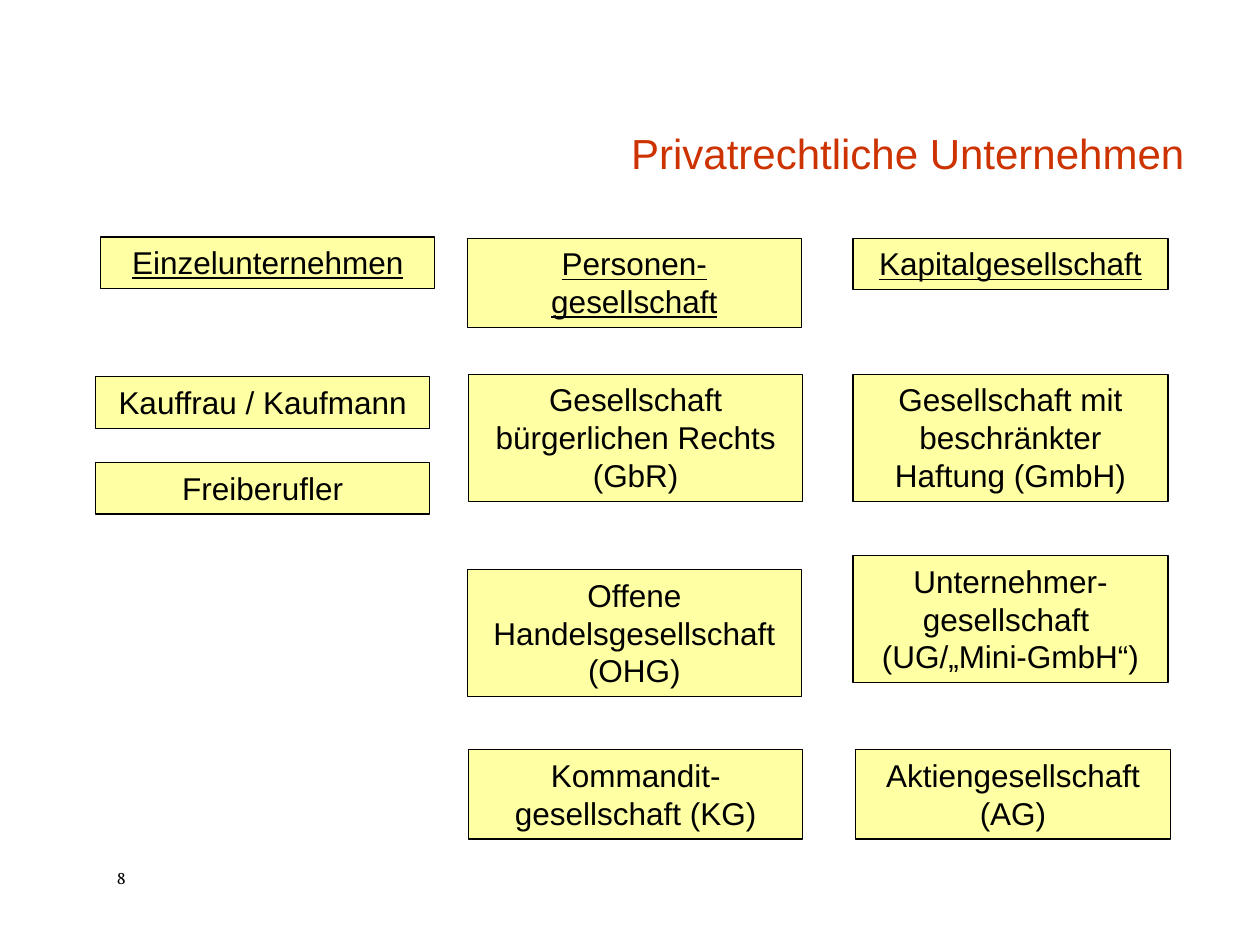
from dataclasses import dataclass

import pptx
import pptx.dml.color
import pptx.enum.shapes
import pptx.enum.text
import pptx.util
from pptx.dml.color import RGBColor
from pptx.util import Inches

BLACK = RGBColor(0x00, 0x00, 0x00)
YELLOW = RGBColor(0xFF, 0xFF, 0xA3)
RED = RGBColor(0xCC, 0x33, 0x00)
FONT = "Arial"


@dataclass
class Box:
    text: str
    left: float
    top: float
    width: float
    height: float
    heading: bool = False


SOLE_W = PARTNER_W = 2.65
CAPITAL_W = 2.5
ONE_LINE, TWO_LINES, THREE_LINES = 0.41, 0.71, 1.01

BOXES = [
    Box("Einzelunternehmen", 0.8, 1.88, SOLE_W, ONE_LINE, True),
    Box("Kauffrau / Kaufmann", 0.76, 2.99, SOLE_W, ONE_LINE),
    Box("Freiberufler", 0.76, 3.67, SOLE_W, ONE_LINE),
    Box("Personen-gesellschaft", 3.71, 1.89, PARTNER_W, TWO_LINES, True),
    Box("Gesellschaft bürgerlichen Rechts (GbR)", 3.72, 2.97, PARTNER_W, THREE_LINES),
    Box("Offene Handelsgesellschaft (OHG)", 3.71, 4.52, PARTNER_W, THREE_LINES),
    Box("Kommandit-gesellschaft (KG)", 3.72, 5.95, PARTNER_W, TWO_LINES),
    Box("Kapitalgesellschaft", 6.77, 1.89, CAPITAL_W, ONE_LINE, True),
    Box("Gesellschaft mit beschränkter Haftung (GmbH)", 6.77, 2.97, CAPITAL_W, THREE_LINES),
    Box("Unternehmer-gesellschaft \v(UG/„Mini-GmbH“)", 6.77, 4.41, CAPITAL_W, THREE_LINES),
    Box("Aktiengesellschaft (AG)", 6.79, 5.95, CAPITAL_W, TWO_LINES),
]


def format_runs(
    p: pptx.text.text._Paragraph, font: str, size: float, color: RGBColor, underline: bool = False
) -> None:
    for r in p.runs:
        r.font.name = font
        r.font.size = pptx.util.Pt(size)
        r.font.color.rgb = color
        if underline:
            r.font.underline = True


def add_title(s: pptx.slide.Slide, text: str) -> None:
    sp = s.shapes.title
    sp.left, sp.top, sp.width, sp.height = Inches(2.09), Inches(0.42), Inches(7.41), Inches(1.05)
    tf = sp.text_frame
    tf.text = text
    tf.vertical_anchor = pptx.enum.text.MSO_ANCHOR.BOTTOM
    p = tf.paragraphs[0]
    p.alignment = pptx.enum.text.PP_ALIGN.RIGHT
    p.line_spacing = 0.9
    format_runs(p, FONT, 24, RED)


def add_box(s: pptx.slide.Slide, box: Box) -> None:
    sp = s.shapes.add_shape(
        pptx.enum.shapes.MSO_SHAPE.RECTANGLE,
        Inches(box.left), Inches(box.top), Inches(box.width), Inches(box.height),
    )
    sp.shadow.inherit = False
    sp.fill.solid()
    sp.fill.fore_color.rgb = YELLOW
    sp.line.color.rgb = BLACK
    sp.line.width = pptx.util.Pt(0.75)
    tf = sp.text_frame
    tf.text = box.text
    tf.word_wrap = True
    tf.auto_size = pptx.enum.text.MSO_AUTO_SIZE.SHAPE_TO_FIT_TEXT
    tf.vertical_anchor = pptx.enum.text.MSO_ANCHOR.TOP
    p = tf.paragraphs[0]
    p.alignment = pptx.enum.text.PP_ALIGN.CENTER
    format_runs(p, FONT, 18, BLACK, box.heading)


def add_page_number(s: pptx.slide.Slide, number: int) -> None:
    sp = s.shapes.add_textbox(Inches(0.83), Inches(6.83), Inches(0.67), Inches(0.27))
    tf = sp.text_frame
    tf.text = str(number)
    tf.word_wrap = True
    tf.auto_size = pptx.enum.text.MSO_AUTO_SIZE.SHAPE_TO_FIT_TEXT
    format_runs(tf.paragraphs[0], "Vollkorn", 10, BLACK)


def main() -> None:
    prs = pptx.Presentation()
    prs.slide_width, prs.slide_height = Inches(10), Inches(7.5)
    s = prs.slides.add_slide(prs.slide_layouts[5])
    add_title(s, "Privatrechtliche Unternehmen")
    for box in BOXES:
        add_box(s, box)
    add_page_number(s, 8)
    prs.save("out.pptx")


if __name__ == "__main__":
    main()
